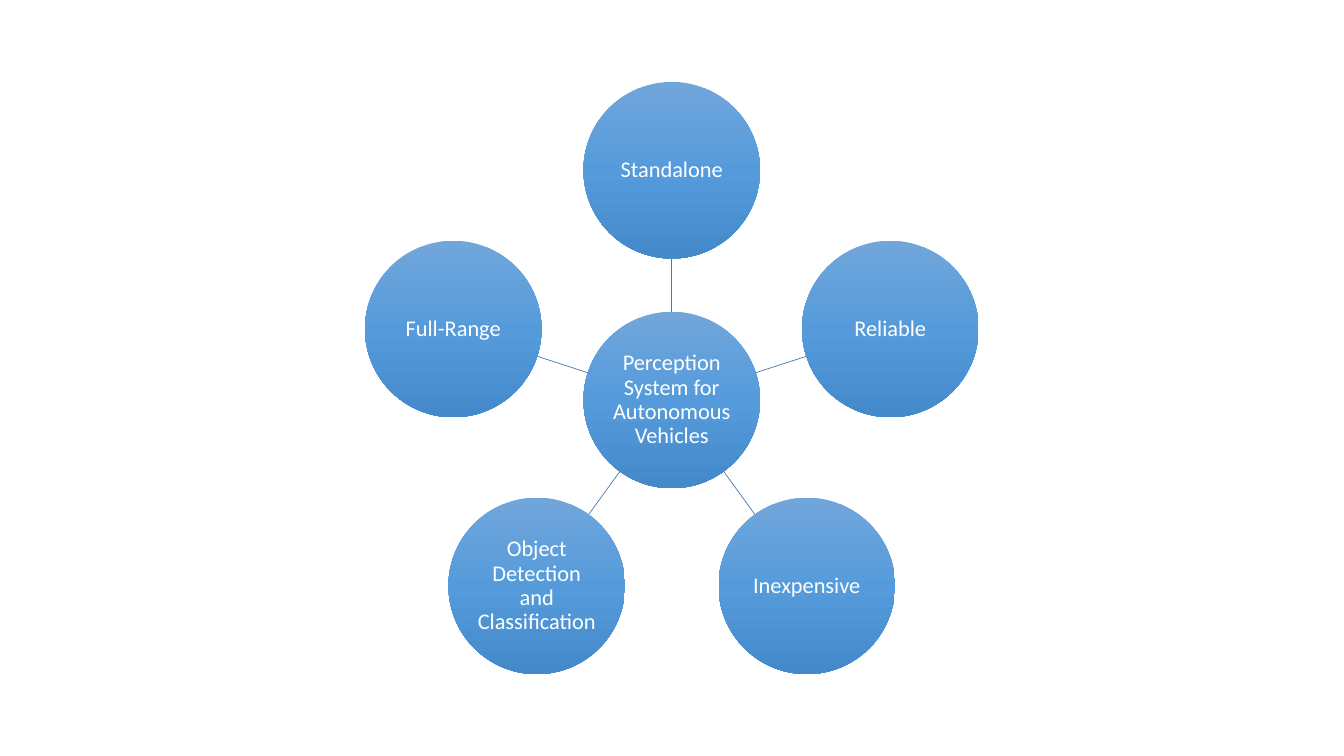
import copy
import math
from dataclasses import dataclass

from pptx import Presentation
from pptx import util as u
from pptx.dml.color import RGBColor
from pptx.enum import shapes, text
from pptx.oxml import ns
from pptx.oxml import xmlchemy


@dataclass(frozen=True)
class Theme:
    font: str = "Calibri"
    label_size: float = 16
    label_color: str = "FFFFFF"
    spoke_color: str = "497CAB"
    spoke_width: float = 0.5
    gradient: tuple[tuple[float, str], ...] = (
        (0, "71A6DB"),
        (0.5, "559BDB"),
        (1, "448ACA"),
    )


@dataclass(frozen=True)
class Bubble:
    label: str
    x: float
    y: float


THEME = Theme()
DIAMETER = 4.45
RING_RADIUS = 5.79
INSET = 0.03
HUB = Bubble("Perception System for Autonomous Vehicles", 16.93, 10.08)
QUALITIES = (
    "Standalone",
    "Reliable",
    "Inexpensive",
    "Object Detection and Classification",
    "Full-Range",
)


def write_text(frame, content: str, *, size: float, color: str, font: str,
               alignment=text.PP_ALIGN.CENTER, line_spacing: float = 0.9) -> None:
    frame.word_wrap = True
    frame.vertical_anchor = text.MSO_ANCHOR.MIDDLE
    frame.margin_left = frame.margin_right = u.Cm(INSET)
    frame.margin_top = frame.margin_bottom = u.Cm(INSET)
    paragraph = frame.paragraphs[0]
    paragraph.alignment = alignment
    paragraph.line_spacing = line_spacing
    run = paragraph.add_run()
    run.text = content
    run.font.name = font
    run.font.size = u.Pt(size)
    run.font.color.rgb = RGBColor.from_string(color)


def fill_gradient(shape) -> None:
    shape.fill.gradient()
    shape.fill.gradient_angle = 270
    stop_list = shape._element.spPr.find(f"{ns.qn('a:gradFill')}/{ns.qn('a:gsLst')}")
    stop_list.append(copy.deepcopy(stop_list[-1]))
    for stop, (position, color) in zip(shape.fill.gradient_stops, THEME.gradient):
        stop.position = position
        stop.color.rgb = RGBColor.from_string(color)


def draw_bubble(slide, bubble: Bubble) -> None:
    shape = slide.shapes.add_shape(
        shapes.MSO_SHAPE.OVAL,
        u.Cm(bubble.x - DIAMETER / 2),
        u.Cm(bubble.y - DIAMETER / 2),
        u.Cm(DIAMETER),
        u.Cm(DIAMETER),
    )
    shape.shadow.inherit = False
    shape.line.fill.background()
    fill_gradient(shape)
    write_text(shape.text_frame, bubble.label, size=THEME.label_size,
               color=THEME.label_color, font=THEME.font)


def point_on_ring(angle: float, radius: float) -> tuple[float, float]:
    return HUB.x + radius * math.sin(angle), HUB.y - radius * math.cos(angle)


def draw_spoke(slide, angle: float) -> None:
    start = point_on_ring(angle, DIAMETER / 2)
    end = point_on_ring(angle, RING_RADIUS - DIAMETER / 2)
    spoke = slide.shapes.add_connector(
        shapes.MSO_CONNECTOR.STRAIGHT, *(u.Cm(length) for length in start + end)
    )
    spoke.line.color.rgb = RGBColor.from_string(THEME.spoke_color)
    spoke.line.width = u.Pt(THEME.spoke_width)
    spoke._element.spPr.append(xmlchemy.OxmlElement("a:effectLst"))


def main() -> None:
    presentation = Presentation()
    presentation.slide_width = u.Cm(33.87)
    presentation.slide_height = u.Cm(19.05)
    slide = presentation.slides.add_slide(presentation.slide_layouts[6])
    draw_bubble(slide, HUB)
    for index, label in enumerate(QUALITIES):
        angle = math.tau * index / len(QUALITIES)
        draw_spoke(slide, angle)
        draw_bubble(slide, Bubble(label, *point_on_ring(angle, RING_RADIUS)))
    presentation.save("out.pptx")


if __name__ == "__main__":
    main()
